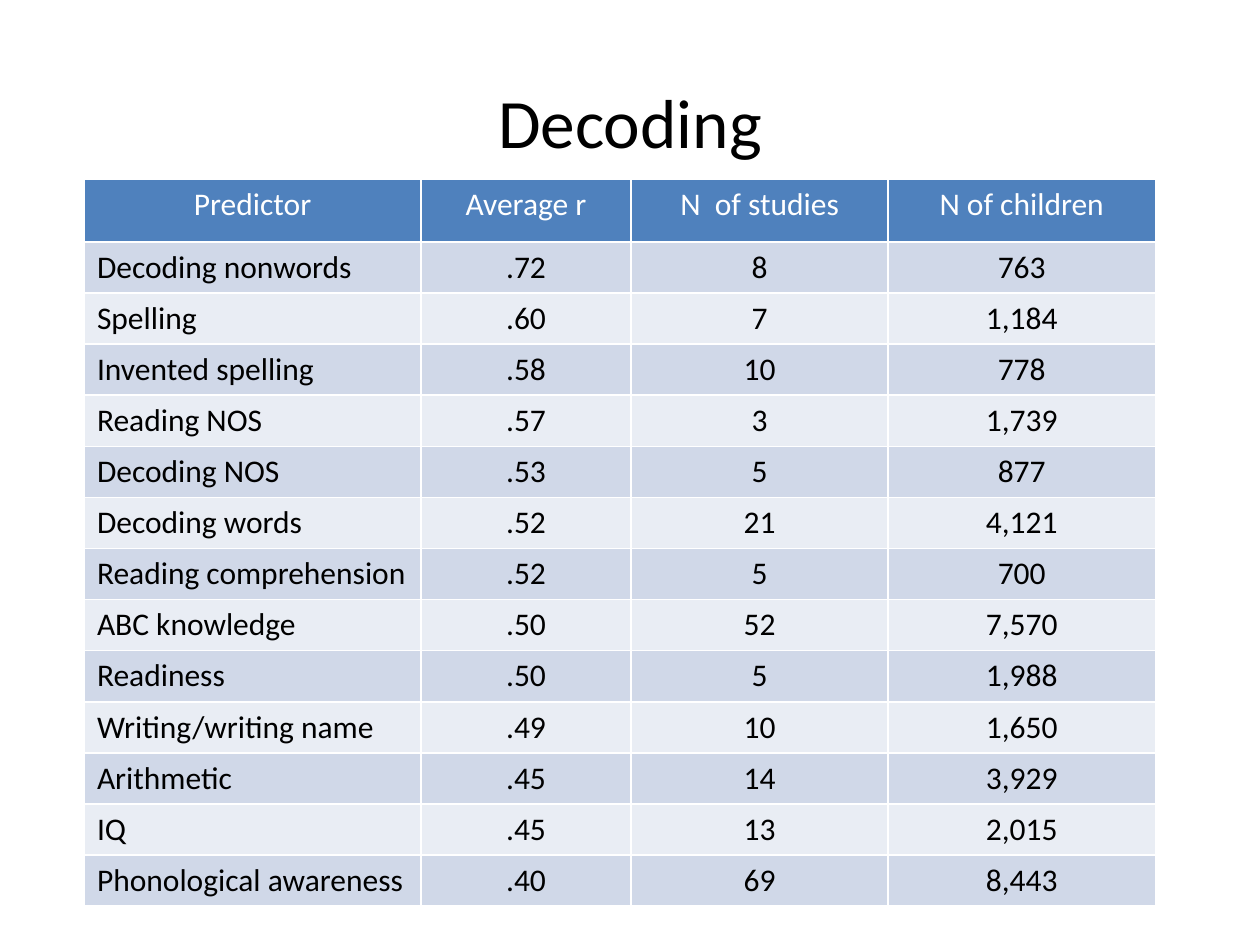
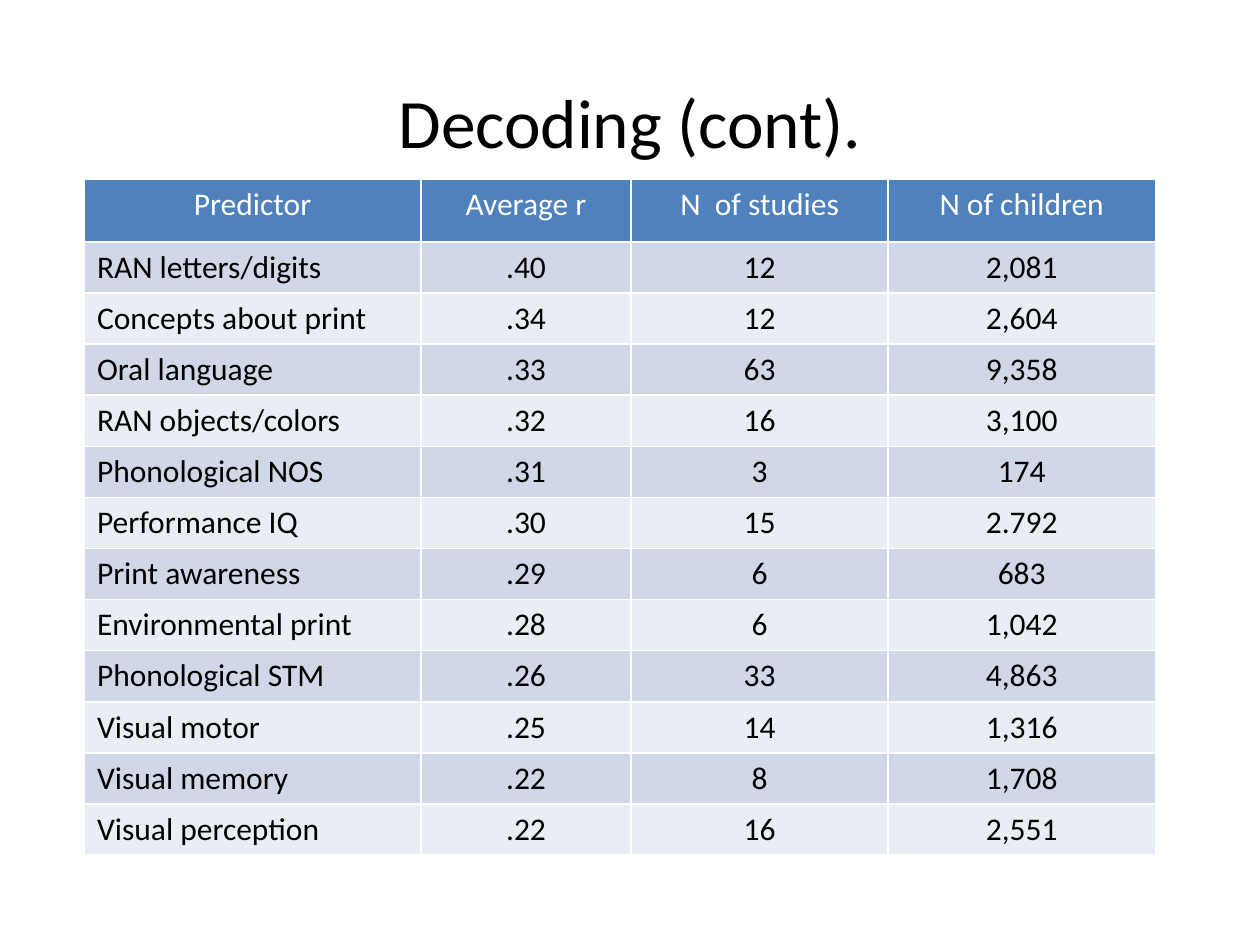
"""Build two slides that tabulate predictors of decoding."""
from pptx import Presentation
from pptx.dml.color import RGBColor
from pptx.enum import text
from pptx.util import Inches, Pt

HEADINGS = ("Predictor", "Average r", "N  of studies", "N of children")
PAGES = {
    "Decoding": [
        ("Decoding nonwords", ".72", "8", "763"),
        ("Spelling", ".60", "7", "1,184"),
        ("Invented spelling", ".58", "10", "778"),
        ("Reading NOS", ".57", "3", "1,739"),
        ("Decoding NOS", ".53", "5", "877"),
        ("Decoding words", ".52", "21", "4,121"),
        ("Reading comprehension", ".52", "5", "700"),
        ("ABC knowledge", ".50", "52", "7,570"),
        ("Readiness", ".50", "5", "1,988"),
        ("Writing/writing name", ".49", "10", "1,650"),
        ("Arithmetic", ".45", "14", "3,929"),
        ("IQ", ".45", "13", "2,015"),
        ("Phonological awareness", ".40", "69", "8,443"),
    ],
    "Decoding (cont).": [
        ("RAN letters/digits", ".40", "12", "2,081"),
        ("Concepts about print", ".34", "12", "2,604"),
        ("Oral language", ".33", "63", "9,358"),
        ("RAN objects/colors", ".32", "16", "3,100"),
        ("Phonological NOS", ".31", "3", "174"),
        ("Performance IQ", ".30", "15", "2.792"),
        ("Print awareness", ".29", "6", "683"),
        ("Environmental print", ".28", "6", "1,042"),
        ("Phonological STM", ".26", "33", "4,863"),
        ("Visual motor", ".25", "14", "1,316"),
        ("Visual memory", ".22", "8", "1,708"),
        ("Visual perception", ".22", "16", "2,551"),
    ],
}
FONT = "Calibri"
BLACK, WHITE, HEADING_FILL = "000000", "FFFFFF", "4F81BD"
BANDS = ("E9EDF4", "D0D8E8")
COLUMN_WIDTHS = (2.67, 1.67, 2.04, 2.12)
HEADING_HEIGHT = Inches(0.5)
ROW_HEIGHT = Inches(5.27 / 13)


def color(value):
    return RGBColor.from_string(value)


def write(frame, words, size, ink, align):
    frame.text = words
    paragraph = frame.paragraphs[0]
    paragraph.alignment = align
    font = paragraph.runs[0].font
    font.name, font.size, font.bold = FONT, Pt(size), False
    font.color.rgb = color(ink)


def add_title(slide, words):
    title = slide.shapes.title
    title.left, title.top = Inches(0.75), Inches(0.67)
    title.width, title.height = Inches(8.5), Inches(0.58)
    write(title.text_frame, words, 39.6, BLACK, text.PP_ALIGN.CENTER)
    title.text_frame.auto_size = text.MSO_AUTO_SIZE.NONE
    title.text_frame.vertical_anchor = text.MSO_ANCHOR.MIDDLE


def add_predictors(slide, predictors):
    rows = [HEADINGS, *predictors]
    height = HEADING_HEIGHT + ROW_HEIGHT * len(predictors)
    grid = slide.shapes.add_table(
        len(rows), len(HEADINGS), Inches(0.67), Inches(1.42),
        Inches(sum(COLUMN_WIDTHS)), height).table
    for column, width in zip(grid.columns, COLUMN_WIDTHS):
        column.width = Inches(width)
    for r, row in enumerate(rows):
        heading = r == 0
        grid.rows[r].height = HEADING_HEIGHT if heading else ROW_HEIGHT
        for c, words in enumerate(row):
            cell = grid.cell(r, c)
            cell.fill.solid()
            cell.fill.fore_color.rgb = color(HEADING_FILL if heading else BANDS[r % 2])
            centred = heading or c > 0
            write(cell.text_frame, words, 18, WHITE if heading else BLACK,
                  text.PP_ALIGN.CENTER if centred else text.PP_ALIGN.LEFT)


def main():
    deck = Presentation()
    deck.slide_width, deck.slide_height = Inches(10), Inches(7.5)
    for heading, predictors in PAGES.items():
        slide = deck.slides.add_slide(deck.slide_layouts[5])
        add_title(slide, heading)
        add_predictors(slide, predictors)
    deck.save("out.pptx")


if __name__ == "__main__":
    main()
